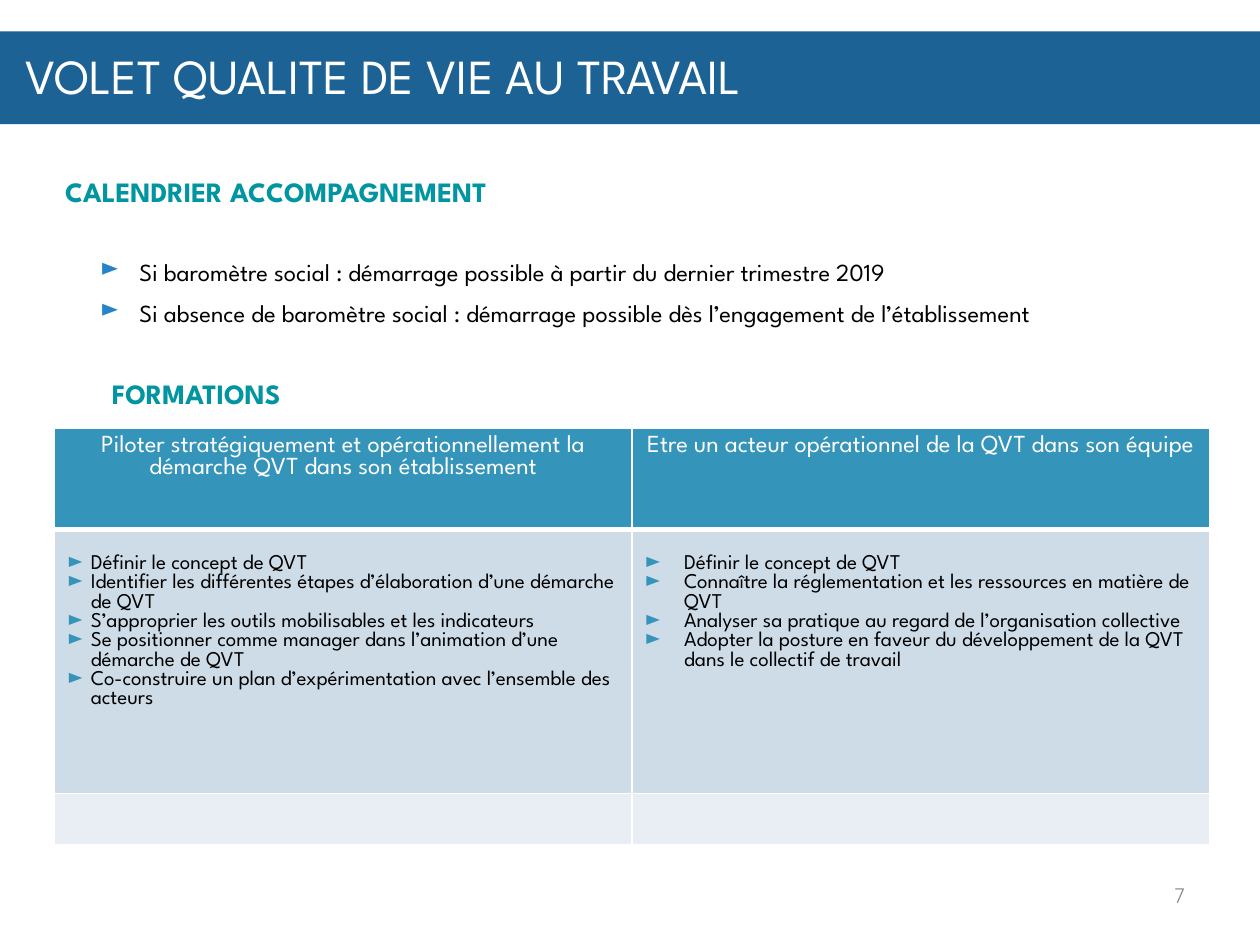
from dataclasses import dataclass

from pptx import Presentation
from pptx.dml.color import RGBColor
from pptx.enum import shapes, text
from pptx.oxml import parse_xml
from pptx.oxml import ns
from pptx.util import Pt


@dataclass(frozen=True)
class Theme:
    font: str = "League Spartan"
    number_font: str = "Quicksand"
    banner: str = "1D6294"
    heading: str = "0095A0"
    bullet: str = "2683C6"
    header: str = "3494BA"
    row: str = "CEDCE7"
    last_row: str = "E8EEF3"
    white: str = "FFFFFF"
    black: str = "000000"
    grey: str = "898989"
    title_size: float = 28
    heading_size: float = 16
    body_size: float = 14
    small_size: float = 12


THEME = Theme()
ALIGN = text.PP_ALIGN
BULLET = "►"

PERIODS = [
    "Si baromètre social : démarrage possible à partir du dernier trimestre 2019",
    "Si absence de baromètre social : démarrage possible dès l’engagement de l’établissement",
]
COURSES = [
    ("Piloter stratégiquement et opérationnellement la démarche QVT dans son établissement", 13.5, [
        "Définir le concept de QVT",
        "Identifier les différentes étapes d’élaboration d’une démarche de QVT",
        "S’approprier les outils mobilisables et les indicateurs",
        "Se positionner comme manager dans l’animation d’une démarche de QVT",
        "Co-construire un plan d’expérimentation avec l’ensemble des acteurs",
    ]),
    ("Etre un acteur opérationnel de la QVT dans son équipe", 22.5, [
        "Définir le concept de QVT",
        "Connaître la réglementation et les ressources en matière de QVT",
        "Analyser sa pratique au regard de l’organisation collective",
        "Adopter la posture en faveur du développement de la QVT dans le collectif de travail",
    ]),
]


def set_all(target, **values):
    for name, value in values.items():
        setattr(target, name, value)


def add_bullet(paragraph, color, left, hanging):
    properties = paragraph._p.get_or_add_pPr()
    properties.set("marL", str(Pt(left)))
    properties.set("indent", str(-Pt(hanging)))
    namespace = ns.nsdecls("a")
    for xml in (
        f'<a:buClr {namespace}><a:srgbClr val="{color}"/></a:buClr>',
        f'<a:buChar {namespace} char="{BULLET}"/>',
    ):
        properties.append(parse_xml(xml))


def write(frame, lines, size, color, font=THEME.font, bold=False, bullet=None, gap=0, **layout):
    for index, line in enumerate(lines):
        paragraph = frame.paragraphs[0] if index == 0 else frame.add_paragraph()
        paragraph.text = line
        if bullet:
            add_bullet(paragraph, *bullet)
        set_all(paragraph, **layout)
        if index and gap:
            paragraph.space_before = Pt(gap)
        set_all(paragraph.font, name=font, size=Pt(size), bold=bold)
        paragraph.font.color.rgb = RGBColor.from_string(color)


def add_text(slide, box, lines, size, color, margins=(7.2, 3.6, 7.2, 3.6), **style):
    frame = slide.shapes.add_textbox(*map(Pt, box)).text_frame
    left, top, right, bottom = map(Pt, margins)
    set_all(frame, word_wrap=True, margin_left=left, margin_top=top,
            margin_right=right, margin_bottom=bottom)
    write(frame, lines, size, color, **style)


def add_banner(slide, box, title):
    left, top, width, height = box
    banner = slide.shapes.add_shape(shapes.MSO_SHAPE.RECTANGLE, *map(Pt, box))
    banner.shadow.inherit = False
    banner.fill.solid()
    banner.fill.fore_color.rgb = RGBColor.from_string(THEME.banner)
    banner.line.fill.background()

    placeholder = slide.shapes.title
    placeholder.element.addprevious(banner.element)
    set_all(placeholder, left=Pt(left + 14.4), top=Pt(top + 1.5),
            width=Pt(width - 22.4), height=Pt(height - 2))
    frame = placeholder.text_frame
    set_all(frame, margin_left=0, margin_top=0, margin_right=0, margin_bottom=0,
            word_wrap=True, vertical_anchor=text.MSO_ANCHOR.MIDDLE)
    write(frame, [title], THEME.title_size, THEME.white, alignment=ALIGN.LEFT, line_spacing=0.9)


def add_heading(slide, box, heading):
    add_text(slide, box, [heading], THEME.heading_size, THEME.heading,
             margins=(7.2, 9, 7.2, 3), bold=True, alignment=ALIGN.JUSTIFY)


def add_periods(slide, box):
    add_text(slide, box, PERIODS, THEME.body_size, THEME.black, margins=(0, 29.3, 0, 0),
             bullet=(THEME.bullet, 36.5, 22.5), gap=6.8, alignment=ALIGN.JUSTIFY)


def set_borders(cell, **widths):
    properties = cell._tc.get_or_add_tcPr()
    for index, (side, width) in enumerate(widths.items()):
        properties.insert(index, parse_xml(
            f'<a:ln{side} {ns.nsdecls("a")} w="{Pt(width)}"><a:solidFill>'
            f'<a:srgbClr val="{THEME.white}"/></a:solidFill></a:ln{side}>'))


def add_courses(slide, box):
    heights = (57.5, 151, 29)
    fills = (THEME.header, THEME.row, THEME.last_row)
    table = slide.shapes.add_table(len(heights), len(COURSES), *map(Pt, box)).table
    table.horz_banding = False
    for row, height in zip(table.rows, heights):
        row.height = Pt(height)

    for column, (heading, indent, topics) in enumerate(COURSES):
        for row, fill in enumerate(fills):
            cell = table.cell(row, column)
            cell.fill.solid()
            cell.fill.fore_color.rgb = RGBColor.from_string(fill)
            set_borders(cell, L=1, R=1, T=3 if row == 1 else 1, B=3 if row == 0 else 1)
        write(table.cell(0, column).text_frame, [heading], THEME.body_size, THEME.white,
              alignment=ALIGN.CENTER)
        topic_cell = table.cell(1, column)
        topic_cell.margin_top = Pt(14.6)
        write(topic_cell.text_frame, topics, THEME.small_size, THEME.black,
              bullet=(THEME.header, indent, indent))


def add_number(slide, box, number):
    add_text(slide, box, [number], THEME.small_size, THEME.grey,
             font=THEME.number_font, alignment=ALIGN.RIGHT)


def main():
    presentation = Presentation()
    set_all(presentation, slide_width=Pt(720), slide_height=Pt(540))
    slide = presentation.slides.add_slide(presentation.slide_layouts[5])
    add_banner(slide, (0, 18, 720, 53), "VOLET QUALITE DE VIE AU TRAVAIL")
    add_number(slide, (516, 500.5, 168, 29), "7")
    add_periods(slide, (43.2, 117.4, 660, 407))
    add_heading(slide, (30.2, 90.7, 276.5, 26.6), "CALENDRIER ACCOMPAGNEMENT")
    add_heading(slide, (56.9, 206, 117.4, 26.6), "FORMATIONS")
    add_courses(slide, (31.2, 245, 660, 237.5))
    presentation.save("out.pptx")


if __name__ == "__main__":
    main()
